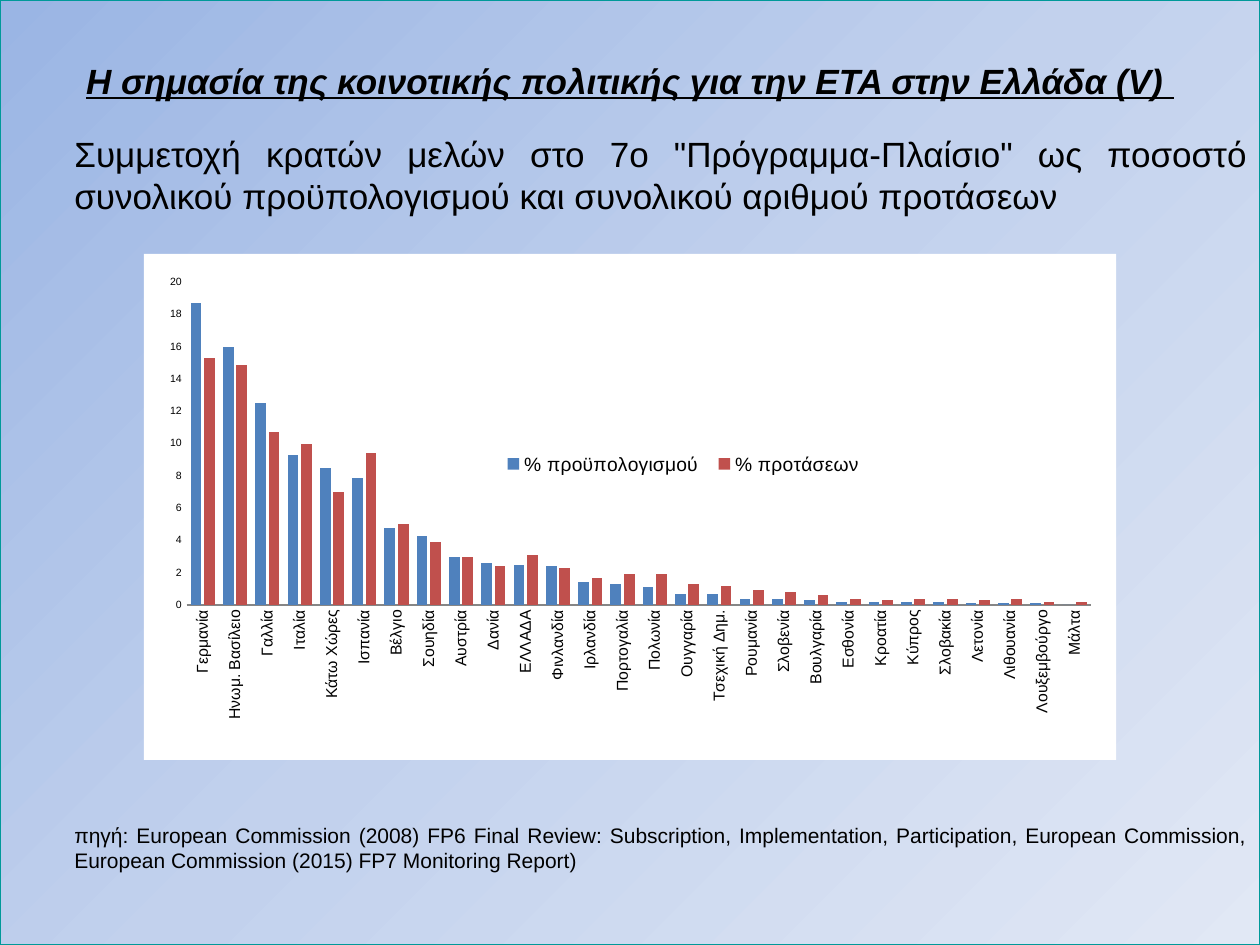
import copy

import pptx
import pptx.chart.data
import pptx.dml.color
import pptx.enum.chart
import pptx.enum.shapes
import pptx.enum.text
import pptx.oxml
import pptx.oxml.ns
import pptx.util
from pptx.util import Cm

FONT = "Arial"
ALIGN = pptx.enum.text.PP_ALIGN
NONE_TICK = pptx.enum.chart.XL_TICK_MARK.NONE

TITLE = "Η σημασία της κοινοτικής πολιτικής για την ΕΤΑ στην Ελλάδα (V) "
SUBJECT = ('Συμμετοχή κρατών μελών στο 7ο "Πρόγραμμα-Πλαίσιο" ως ποσοστό '
           "συνολικού προϋπολογισμού και συνολικού αριθμού προτάσεων")
CITATION = ("πηγή: European Commission (2008) FP6 Final Review: Subscription, "
            "Implementation, Participation, European Commission, "
            "European Commission (2015) FP7 Monitoring Report)")

COUNTRIES = [
    "Γερμανία", "Ηνωμ. Βασίλειο", "Γαλλία", "Ιταλία", "Κάτω Χώρες", "Ισπανία", "Βέλγιο",
    "Σουηδία", "Αυστρία", "Δανία", "ΕΛΛΑΔΑ", "Φινλανδία", "Ιρλανδία", "Πορτογαλία",
    "Πολωνία", "Ουγγαρία", "Τσεχική Δημ.", "Ρουμανία", "Σλοβενία", "Βουλγαρία", "Εσθονία",
    "Κροατία", "Κύπρος", "Σλοβακία", "Λετονία", "Λιθουανία", "Λουξεμβούργο", "Μάλτα",
]
SERIES = [
    ("% προϋπολογισμoύ", "4F81BD",
     [18.7, 16, 12.5, 9.3, 8.5, 7.9, 4.8, 4.3, 3, 2.6, 2.5, 2.4, 1.4, 1.3,
      1.1, 0.7, 0.7, 0.4, 0.4, 0.3, 0.2, 0.2, 0.2, 0.2, 0.1, 0.1, 0.1, 0]),
    ("% προτάσεων", "C0504D",
     [15.3, 14.9, 10.7, 10, 7, 9.4, 5, 3.9, 3, 2.4, 3.1, 2.3, 1.7, 1.9,
      1.9, 1.3, 1.2, 0.9, 0.8, 0.6, 0.4, 0.3, 0.4, 0.4, 0.3, 0.4, 0.2, 0.2]),
]


def color(value):
    return pptx.dml.color.RGBColor.from_string(value)


def set_font(font, size, bold=False):
    font.name = FONT
    font.size = pptx.util.Pt(size)
    font.bold = bold
    font.color.rgb = color("000000")


def fill_gradient(fill, stops, angle):
    """Fill with (position, colour) stops; the angle runs anticlockwise."""
    fill.gradient()
    fill.gradient_angle = angle
    first = fill.gradient_stops[0]._gs
    while len(fill.gradient_stops) < len(stops):
        first.addnext(copy.deepcopy(first))
    for stop, (position, value) in zip(fill.gradient_stops, stops):
        stop.position = position
        stop.color.rgb = color(value)


def add_panel(page, width, height):
    """Add the full-page gradient panel and return its empty text frame."""
    box = page.shapes.add_shape(pptx.enum.shapes.MSO_SHAPE.RECTANGLE, 0, 0, width, height)
    box.shadow.inherit = False
    fill_gradient(box.fill, [(0, "9AB5E4"), (0.5, "C2D1ED"), (1, "E1E8F5")], 315)
    box.line.color.rgb = color("009999")
    box.line.width = pptx.util.Pt(0.75)
    frame = box.text_frame
    frame.word_wrap = True
    frame.vertical_anchor = pptx.enum.text.MSO_ANCHOR.TOP
    frame.margin_left = frame.margin_right = Cm(0.25)
    frame.margin_top = Cm(1.19)
    return frame


def write_paragraph(para, text, size, align, before=0, indent=0, heading=False):
    para.alignment = align
    para.space_before = pptx.util.Pt(before)
    para._p.get_or_add_pPr().set("marL", str(Cm(indent)))
    span = para.add_run()
    span.text = text
    set_font(span.font, size, bold=heading)
    span.font.italic = span.font.underline = heading


def place(element, x, y, width, height, inner=False):
    """Give a chart part a manual layout in fractions of the chart."""
    for old in element.findall(pptx.oxml.ns.qn("c:layout")):
        element.remove(old)
    target = '<c:layoutTarget val="inner"/>' if inner else ""
    sizes = "".join(f'<c:{tag} val="{value}"/>'
                    for tag, value in zip("xywh", (x, y, width, height)))
    layout = pptx.oxml.parse_xml(
        f'<c:layout {pptx.oxml.ns.nsdecls("c")}><c:manualLayout>{target}'
        f'<c:xMode val="edge"/><c:yMode val="edge"/>{sizes}</c:manualLayout></c:layout>')
    if inner:
        element.insert(0, layout)
    else:
        element.find(pptx.oxml.ns.qn("c:legendPos")).addnext(layout)


def fill_chart_area(chart, value):
    chart._chartSpace.chart.addnext(pptx.oxml.parse_xml(
        f'<c:spPr {pptx.oxml.ns.nsdecls("c", "a")}><a:solidFill><a:srgbClr val="{value}"/>'
        '</a:solidFill><a:ln><a:noFill/></a:ln></c:spPr>'))


def style_axes(chart):
    for axis, size in ((chart.category_axis, 9), (chart.value_axis, 6)):
        axis.has_major_gridlines = False
        axis.major_tick_mark = axis.minor_tick_mark = NONE_TICK
        set_font(axis.tick_labels.font, size)
    chart.category_axis.format.line.color.rgb = color("868686")
    labels = chart.category_axis._element.find(pptx.oxml.ns.qn("c:txPr"))
    labels.find(pptx.oxml.ns.qn("a:bodyPr")).set("rot", "-5400000")
    scale = chart.value_axis
    scale.minimum_scale, scale.maximum_scale, scale.major_unit = 0, 20, 2
    scale.format.line.fill.background()


def add_participation_chart(page):
    data = pptx.chart.data.CategoryChartData()
    data.categories = COUNTRIES
    for name, _, values in SERIES:
        data.add_series(name, values)
    chart = page.shapes.add_chart(
        pptx.enum.chart.XL_CHART_TYPE.COLUMN_CLUSTERED,
        Cm(2.9), Cm(5.12), Cm(19.6), Cm(10.2), data).chart
    chart.has_title = False
    set_font(chart.font, 10)
    fill_chart_area(chart, "FFFFFF")
    style_axes(chart)

    plot = chart.plots[0]
    plot.vary_by_categories = False
    plot.gap_width, plot.overlap = 75, -25
    for series, (_, value, _) in zip(plot.series, SERIES):
        series.format.fill.solid()
        series.format.fill.fore_color.rgb = color(value)
    place(chart._chartSpace.chart.plotArea, 0.044, 0.056, 0.93, 0.638, inner=True)

    chart.has_legend = True
    chart.legend.position = pptx.enum.chart.XL_LEGEND_POSITION.BOTTOM
    chart.legend.include_in_layout = False
    set_font(chart.legend.font, 11)
    place(chart.legend._element, 0.36, 0.38, 0.39, 0.07)


def main():
    deck = pptx.Presentation()
    deck.slide_width, deck.slide_height = Cm(25.4), Cm(19.05)
    page = deck.slides.add_slide(deck.slide_layouts[6])
    frame = add_panel(page, deck.slide_width, deck.slide_height)
    write_paragraph(frame.paragraphs[0], TITLE, 20, ALIGN.CENTER, heading=True)
    for text, size, before in ((SUBJECT, 20, 18), (CITATION, 12, 346)):
        write_paragraph(frame.add_paragraph(), text, size, ALIGN.JUSTIFY, before, indent=1.25)
    add_participation_chart(page)
    deck.save("out.pptx")


if __name__ == "__main__":
    main()
